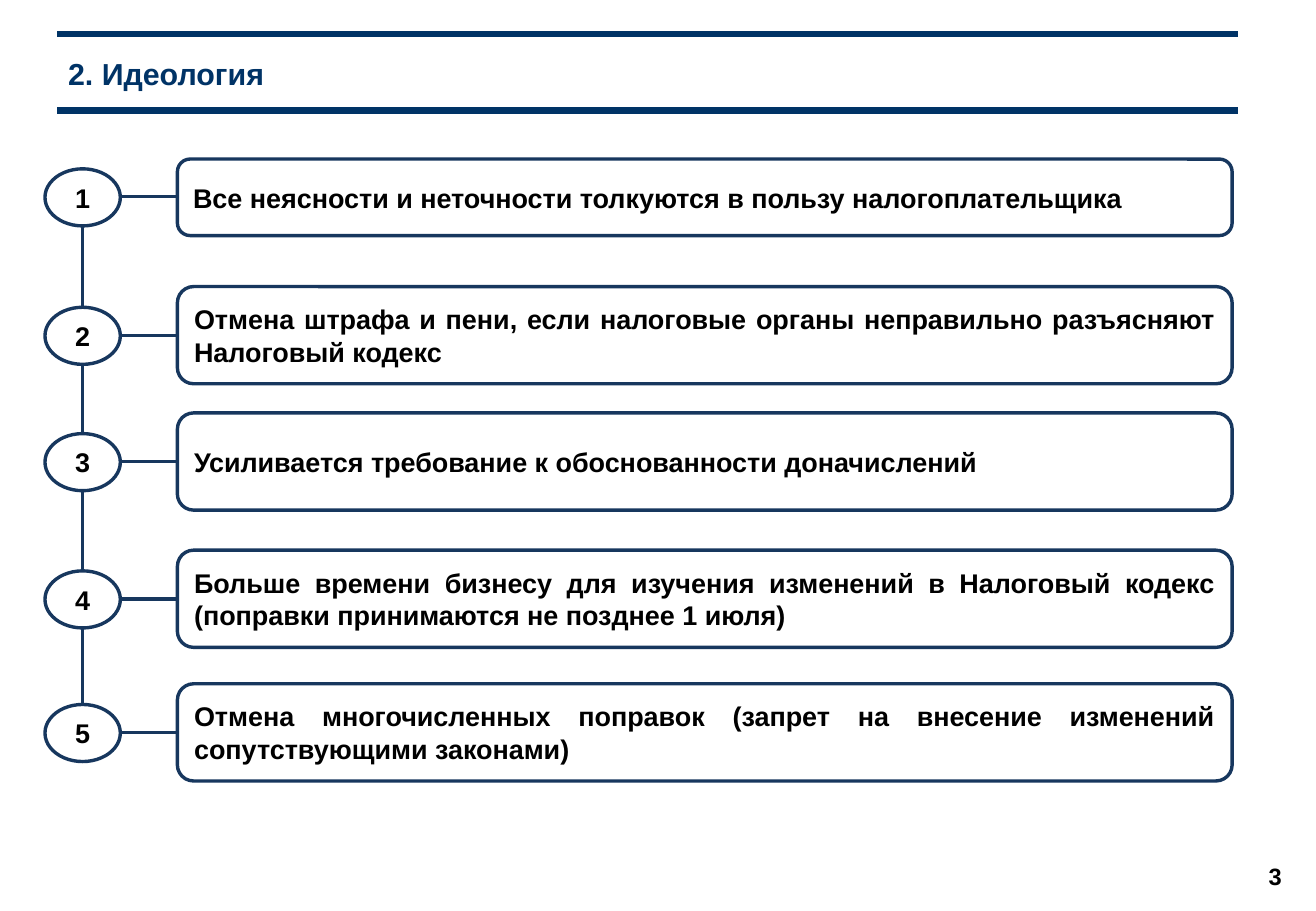
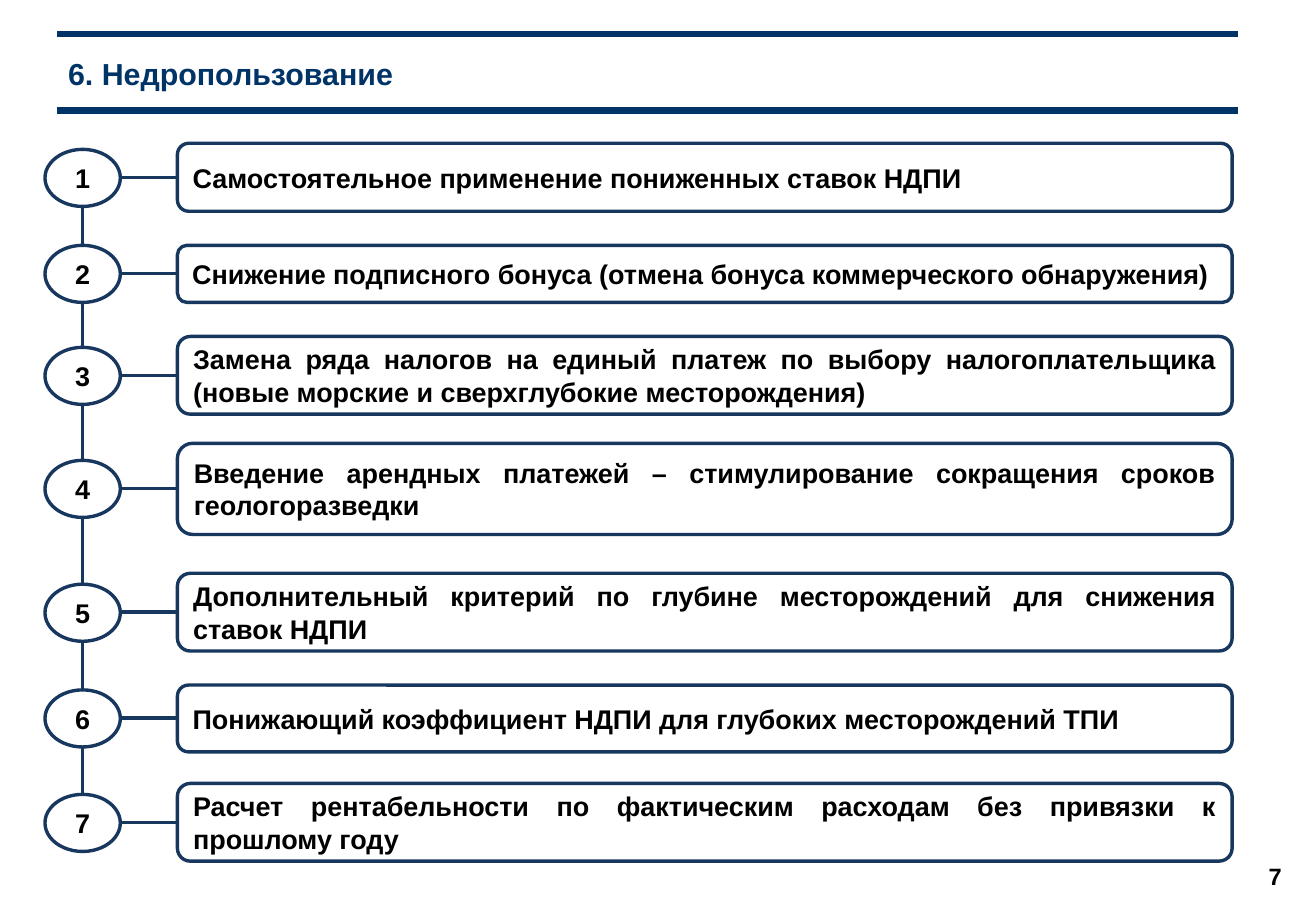
from dataclasses import dataclass

from lxml import etree
from pptx import Presentation
from pptx import util as u
from pptx.dml.color import RGBColor
from pptx.enum import shapes, text
from pptx.oxml.ns import qn

PX = 9144


@dataclass(frozen=True)
class Theme:
    font: str = "Arial"
    band: str = "003366"
    outline: str = "17375E"
    ink: str = "000000"
    paper: str = "FFFFFF"
    title_pt: int = 18
    body_pt: int = 16
    page_pt: int = 14
    outline_pt: int = 2


@dataclass(frozen=True)
class Box:
    x: int
    y: int
    w: int
    h: int

    @property
    def mid(self):
        return self.y + self.h // 2

    @property
    def right(self):
        return self.x + self.w

    @property
    def emu(self):
        return [u.Emu(v * PX) for v in (self.x, self.y, self.w, self.h)]


T = Theme()
TITLE = Box(46, 29, 977, 63)
PAGE = Box(1017, 694, 65, 55)
LIST = Box(37, 118, 977, 591)
OVAL_W, OVAL_H, TEXT_X = 62, 47, 109
BANDS = [(28, 3), (91, 4.5)]

SLIDES = [
    ("2. Идеология", "3", [
        (13, 63, "Все неясности и неточности толкуются в пользу налогоплательщика"),
        (118, 80, "Отмена штрафа и пени, если налоговые органы неправильно разъясняют Налоговый кодекс"),
        (222, 80, "Усиливается требование к обоснованности доначислений"),
        (335, 80, "Больше времени бизнесу для изучения изменений в Налоговый кодекс "
                  "(поправки принимаются не позднее 1 июля)"),
        (445, 80, "Отмена многочисленных поправок (запрет на внесение изменений сопутствующими законами)"),
    ]),
    ("6. Недропользование", "7", [
        (0, 56, "Самостоятельное применение пониженных ставок НДПИ"),
        (84, 47, "Снижение подписного бонуса (отмена бонуса коммерческого обнаружения)"),
        (159, 64, "Замена ряда налогов на единый платеж по выбору налогоплательщика "
                  "(новые морские и сверхглубокие месторождения)"),
        (247, 75, "Введение арендных платежей – стимулирование сокращения сроков геологоразведки"),
        (354, 64, "Дополнительный критерий по глубине месторождений для снижения ставок НДПИ"),
        (446, 55, "Понижающий коэффициент НДПИ для глубоких месторождений ТПИ"),
        (527, 64, "Расчет рентабельности по фактическим расходам без привязки к прошлому году"),
    ]),
]


def write(sp, words, size, color, align):
    tf = sp.text_frame
    tf.word_wrap = True
    tf.vertical_anchor = text.MSO_ANCHOR.MIDDLE
    p = tf.paragraphs[0]
    p.alignment = align
    r = p.add_run()
    r.text = words
    for key, value in dict(name=T.font, size=u.Pt(size), bold=True).items():
        setattr(r.font, key, value)
    r.font.color.rgb = RGBColor.from_string(color)


def add_shape(s, kind, box, words, size=T.body_pt, align=text.PP_ALIGN.CENTER, outlined=True):
    sp = s.shapes.add_shape(kind, *box.emu)
    sp.shadow.inherit = False
    sp.fill.solid()
    sp.fill.fore_color.rgb = RGBColor.from_string(T.paper)
    if outlined:
        sp.line.color.rgb = RGBColor.from_string(T.outline)
        sp.line.width = u.Pt(T.outline_pt)
    else:
        sp.line.fill.background()
    write(sp, words, size, T.ink, align)


def add_line(s, x1, y1, x2, y2, color=T.outline, width=T.outline_pt):
    ends = [u.Emu(v * PX) for v in (x1, y1, x2, y2)]
    line = s.shapes.add_connector(shapes.MSO_CONNECTOR.STRAIGHT, *ends)
    line.line.color.rgb = RGBColor.from_string(color)
    line.line.width = u.Pt(width)
    etree.SubElement(line.element.spPr, qn("a:effectLst"))
    return line


def set_up_layout(layout, s):
    title = layout.placeholders[0]
    for key, value in zip(("left", "top", "width", "height"), TITLE.emu):
        setattr(title, key, value)
    for y, width in BANDS:
        band = add_line(s, 47, y, 1019, y, T.band, width)
        layout.shapes.element.append(band.element)


def add_numbered_list(s, area, rows):
    boxes = [Box(area.x + TEXT_X, area.y + top, area.w - TEXT_X, h) for top, h, _ in rows]
    spine = area.x + OVAL_W // 2
    add_line(s, spine, boxes[0].mid, spine, boxes[-1].mid)
    for n, (box, row) in enumerate(zip(boxes, rows), 1):
        oval = Box(area.x, box.mid - OVAL_H // 2, OVAL_W, OVAL_H)
        add_line(s, oval.right, box.mid, box.x, box.mid)
        add_shape(s, shapes.MSO_SHAPE.OVAL, oval, str(n))
        add_shape(s, shapes.MSO_SHAPE.ROUNDED_RECTANGLE, box, row[2],
                  align=text.PP_ALIGN.JUSTIFY)


def add_list_slide(s, title, page, rows):
    write(s.shapes.title, title, T.title_pt, T.band, text.PP_ALIGN.LEFT)
    add_shape(s, shapes.MSO_SHAPE.RECTANGLE, PAGE, page, T.page_pt, outlined=False)
    add_numbered_list(s, LIST, rows)


def main():
    prs = Presentation()
    prs.slide_width, prs.slide_height = u.Emu(1083 * PX), u.Emu(750 * PX)
    layout = prs.slide_layouts[5]
    for i, content in enumerate(SLIDES):
        s = prs.slides.add_slide(layout)
        if i == 0:
            set_up_layout(layout, s)
        add_list_slide(s, *content)
    prs.save("out.pptx")


if __name__ == "__main__":
    main()
